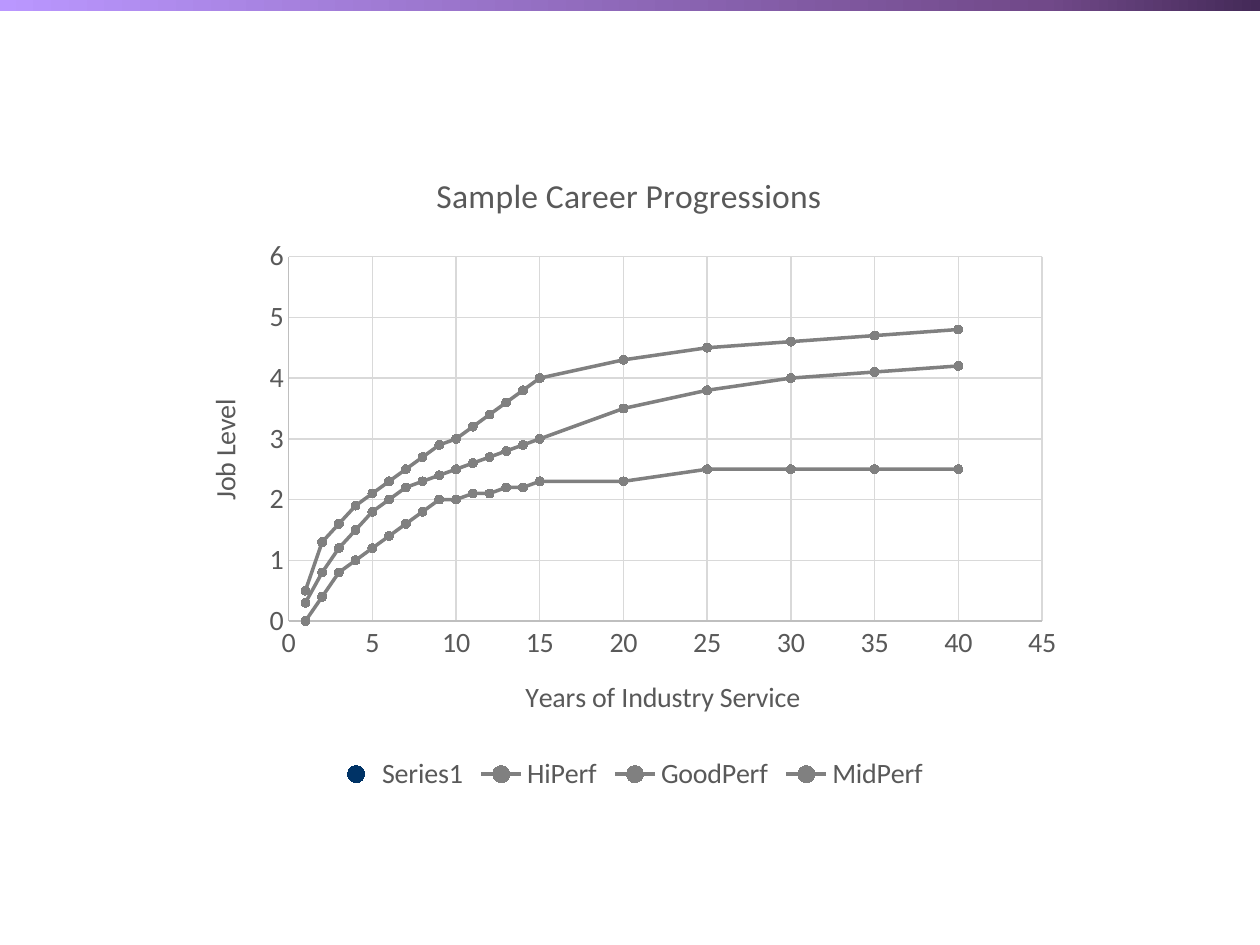
import copy

import pptx
import pptx.chart.data
import pptx.dml.color
import pptx.enum.chart
import pptx.enum.shapes
import pptx.oxml.ns
import pptx.util

PX_PER_INCH = 126
FONT = "Calibri"
TEXT, GRID, AXIS, LINE, NAVY = "595959", "D9D9D9", "BFBFBF", "808080", "003366"

YEARS = list(range(1, 16)) + list(range(20, 41, 5))
CAREERS = {
    "HiPerf": [0.5, 1.3, 1.6, 1.9, 2.1, 2.3, 2.5, 2.7, 2.9, 3,
               3.2, 3.4, 3.6, 3.8, 4, 4.3, 4.5, 4.6, 4.7, 4.8],
    "GoodPerf": [0.3, 0.8, 1.2, 1.5, 1.8, 2, 2.2, 2.3, 2.4, 2.5,
                 2.6, 2.7, 2.8, 2.9, 3, 3.5, 3.8, 4, 4.1, 4.2],
    "MidPerf": [0, 0.4, 0.8, 1, 1.2, 1.4, 1.6, 1.8, 2, 2,
                2.1, 2.1, 2.2, 2.2, 2.3, 2.3, 2.5, 2.5, 2.5, 2.5],
}


def px(n):
    return pptx.util.Emu(round(n * 914400 / PX_PER_INCH))


def rgb(color):
    return pptx.dml.color.RGBColor.from_string(color)


def set_font(font, size):
    font.name = FONT
    font.size = pptx.util.Pt(size)
    font.bold = False
    font.color.rgb = rgb(TEXT)


def set_line(line, color, width):
    line.color.rgb = rgb(color)
    line.width = pptx.util.Pt(width)


def set_title(tf, text, size):
    r = tf.paragraphs[0].add_run()
    r.text = text
    set_font(r.font, size)


def add_gradient_bar(slide, left, top, width, height, stops):
    sp = slide.shapes.add_shape(pptx.enum.shapes.MSO_SHAPE.RECTANGLE,
                                px(left), px(top), px(width), px(height))
    sp.shadow.inherit = False
    sp.line.fill.background()
    sp.fill.gradient()
    sp.fill.gradient_angle = 180
    # A new gradient has two stops; add as many as needed
    gs_list = sp._element.spPr.find(".//" + pptx.oxml.ns.qn("a:gsLst"))
    while len(gs_list) < len(stops):
        gs_list.append(copy.deepcopy(gs_list[-1]))
    for stop, (position, color) in zip(sp.fill.gradient_stops, stops):
        stop.position = position
        stop.color.rgb = rgb(color)


def style_axis(axis, title, maximum, step):
    axis.minimum_scale, axis.maximum_scale = 0, maximum
    axis.major_unit = step
    axis.major_tick_mark = pptx.enum.chart.XL_TICK_MARK.NONE
    axis.minor_tick_mark = pptx.enum.chart.XL_TICK_MARK.NONE
    axis.has_major_gridlines = True
    set_line(axis.major_gridlines.format.line, GRID, 0.75)
    set_line(axis.format.line, AXIS, 0.75)
    set_font(axis.tick_labels.font, 16)
    set_title(axis.axis_title.text_frame, title, 16)


def style_marker(marker, color):
    marker.style = pptx.enum.chart.XL_MARKER_STYLE.CIRCLE
    marker.size = 5
    marker.format.fill.solid()
    marker.format.fill.fore_color.rgb = rgb(color)
    marker.format.line.color.rgb = rgb(color)


def set_plot_area(chart, x, y, w, h):
    """Place the inner plot area, in fractions of the chart."""
    plot_area = chart._chartSpace.chart.plotArea
    old = plot_area.find(pptx.oxml.ns.qn("c:layout"))
    if old is not None:
        plot_area.remove(old)
    sizes = "".join(f'<c:{tag} val="{val}"/>'
                    for tag, val in zip("xywh", (x, y, w, h)))
    plot_area.insert(0, pptx.oxml.parse_xml(
        f'<c:layout {pptx.oxml.ns.nsdecls("c")}><c:manualLayout>'
        '<c:layoutTarget val="inner"/><c:xMode val="edge"/><c:yMode val="edge"/>'
        f'{sizes}</c:manualLayout></c:layout>'))


def add_career_chart(slide, left, top, width, height):
    data = pptx.chart.data.XyChartData()
    levels = data.add_series("Series1")
    for level in range(6):
        levels.add_data_point(40, level)
    for name, values in CAREERS.items():
        series = data.add_series(name)
        for year, value in zip(YEARS, values):
            series.add_data_point(year, value)

    chart = slide.shapes.add_chart(
        pptx.enum.chart.XL_CHART_TYPE.XY_SCATTER_LINES,
        px(left), px(top), px(width), px(height), data).chart
    set_font(chart.font, 16)
    set_title(chart.chart_title.text_frame, "Sample Career Progressions", 19.2)
    chart.chart_title.include_in_layout = False
    chart.plots[0].vary_by_categories = False
    style_axis(chart.category_axis, "Years of Industry Service", 45, 5)
    style_axis(chart.value_axis, "Job Level", 6, 1)
    set_plot_area(chart, 0.12, 0.17, 0.84, 0.56)

    # Legend
    chart.has_legend = True
    chart.legend.position = pptx.enum.chart.XL_LEGEND_POSITION.BOTTOM
    chart.legend.include_in_layout = False
    set_font(chart.legend.font, 16)

    # The level series shows only in the legend
    levels, *careers = chart.plots[0].series
    levels.smooth = False
    levels.format.line.fill.background()
    style_marker(levels.marker, NAVY)
    for i in range(6):
        levels.points[i].marker.style = pptx.enum.chart.XL_MARKER_STYLE.NONE

    # Career lines
    for series in careers:
        series.smooth = False
        set_line(series.format.line, LINE, 2)
        style_marker(series.marker, LINE)


def main():
    prs = pptx.Presentation()
    prs.slide_width, prs.slide_height = px(1260), px(945)
    slide = prs.slides.add_slide(prs.slide_layouts[6])
    add_gradient_bar(slide, -2, -2, 1262, 13,
                     [(0, "442A58"), (0.17, "714989"), (1, "BA97FF")])
    add_career_chart(slide, 181, 146, 897, 651)
    prs.save("out.pptx")


if __name__ == "__main__":
    main()
